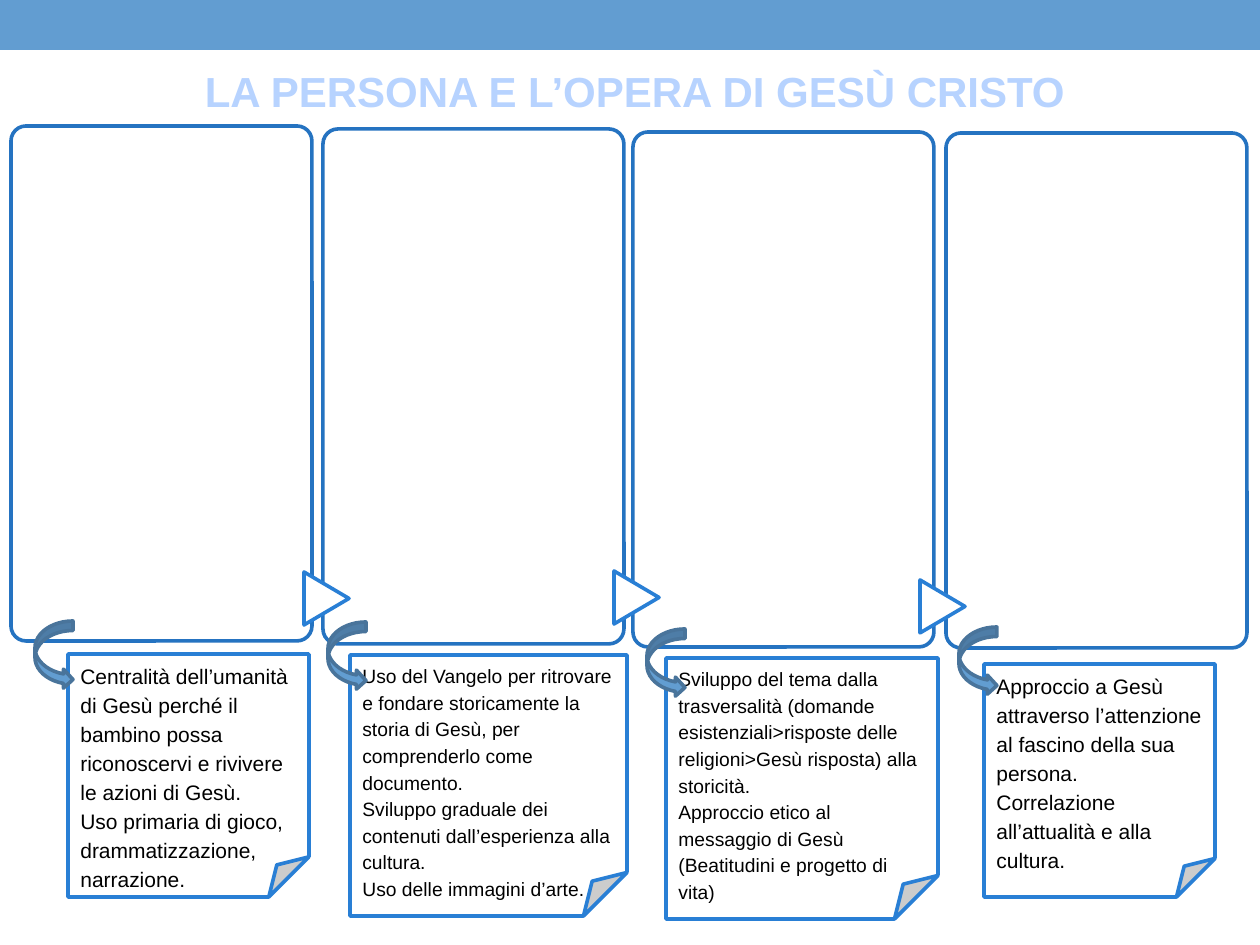
from pptx import Presentation
from pptx import util as u
from pptx.dml.color import RGBColor
from pptx.enum import shapes, text

PX = u.Inches(1) / 126
COLORS = {
    "bar": "629DD1", "paper": "FFFFFF", "frame": "2573C1", "note": "297FD5",
    "arrow_line": "49749B", "title": "B7D3FF", "text": "000000",
}
KIND = shapes.MSO_SHAPE


def color(name):
    return RGBColor.from_string(COLORS[name])


def write(tf, paragraphs, size=12, ink="text", bold=False,
          align=text.PP_ALIGN.LEFT, after=0):
    tf.word_wrap = True
    tf.auto_size = text.MSO_AUTO_SIZE.NONE
    tf.vertical_anchor = text.MSO_ANCHOR.TOP
    tf.margin_left = tf.margin_right = u.Inches(0.1)
    tf.margin_top = tf.margin_bottom = u.Inches(0.05)
    for i, line in enumerate(paragraphs):
        p = tf.paragraphs[0] if i == 0 else tf.add_paragraph()
        p.alignment = align
        p.line_spacing = 1.15
        p.space_before, p.space_after = u.Pt(0), u.Pt(after)
        r = p.add_run()
        r.text = line
        r.font.name, r.font.size, r.font.bold = "Arial", u.Pt(size), bold
        r.font.color.rgb = color(ink)


class Deck:
    def __init__(self, prs):
        self.s = prs.slides.add_slide(prs.slide_layouts[5])

    def shape(self, kind, x, y, w, h, fill="paper", line=None):
        box = [u.Emu(round(v * PX)) for v in (x, y, w, h)]
        sp = self.s.shapes.add_shape(kind, *box)
        sp.shadow.inherit = False
        sp.fill.solid()
        sp.fill.fore_color.rgb = color(fill)
        if line:
            sp.line.color.rgb = color(line)
            sp.line.width = u.Pt(2.08)
        else:
            sp.line.fill.background()
        return sp

    def title(self, words, x, y, w, h):
        sp = self.s.shapes.title
        sp.left, sp.top, sp.width, sp.height = (
            u.Emu(round(v * PX)) for v in (x, y, w, h))
        write(sp.text_frame, [words], size=24, ink="title", bold=True,
              align=text.PP_ALIGN.CENTER, after=10)

    def frame(self, x, y):
        sp = self.shape(KIND.ROUNDED_RECTANGLE, x, y, 301, 515, line="frame")
        sp.adjustments[0] = 0.05

    def pointer(self, x, y):
        sp = self.shape(KIND.FLOWCHART_EXTRACT, x, y, 53, 45, line="note")
        sp.rotation = 90

    def note(self, box, size, paragraphs):
        sp = self.shape(KIND.FOLDED_CORNER, *box, line="note")
        write(sp.text_frame, paragraphs, size=size)

    def arrow(self, x, y):
        self.shape(KIND.CURVED_RIGHT_ARROW, x, y, 38, 68, "bar", "arrow_line")


# Each column: frame corner, note box, text size, arrow corner, note text
COLUMNS = [
    ((11, 126), (68, 654, 241, 243), 12, (35, 621), [
        "Centralità dell’umanità di Gesù perché il bambino possa "
        "riconoscervi e rivivere le azioni di Gesù.",
        "Uso primaria di gioco, drammatizzazione, narrazione."]),
    ((323, 129), (350, 655, 277, 261), 11, (328, 622), [
        "Uso del Vangelo per ritrovare e fondare storicamente la storia "
        "di Gesù, per comprenderlo come documento.",
        "Sviluppo graduale dei contenuti dall’esperienza alla cultura.",
        "Uso delle immagini d’arte."]),
    ((633, 132), (666, 658, 272, 261), 11, (647, 629), [
        "Sviluppo del tema dalla trasversalità (domande "
        "esistenziali>risposte delle religioni>Gesù risposta) alla "
        "storicità.",
        "Approccio etico al messaggio di Gesù (Beatitudini e progetto "
        "di vita)"]),
    ((946, 133), (984, 664, 231, 233), 12, (959, 627), [
        "Approccio a Gesù attraverso l’attenzione al fascino della sua "
        "persona.",
        "Correlazione all’attualità e alla cultura."]),
]
POINTERS = [(300, 576), (610, 575), (916, 584)]


def main():
    prs = Presentation()
    prs.slide_width, prs.slide_height = u.Inches(10), u.Inches(7.5)
    deck = Deck(prs)

    # Header
    deck.shape(KIND.RECTANGLE, 0, 0, 1260, 50, "bar")
    deck.title("LA PERSONA E L’OPERA DI GESÙ CRISTO", 164, 52, 942, 48)

    # Frames and the pointers between them
    for corner, *_ in COLUMNS:
        deck.frame(*corner)
    for corner in POINTERS:
        deck.pointer(*corner)

    # Notes with their curved arrows
    for _, box, size, arrow, paragraphs in COLUMNS:
        deck.note(box, size, paragraphs)
        deck.arrow(*arrow)

    prs.save("out.pptx")


if __name__ == "__main__":
    main()
